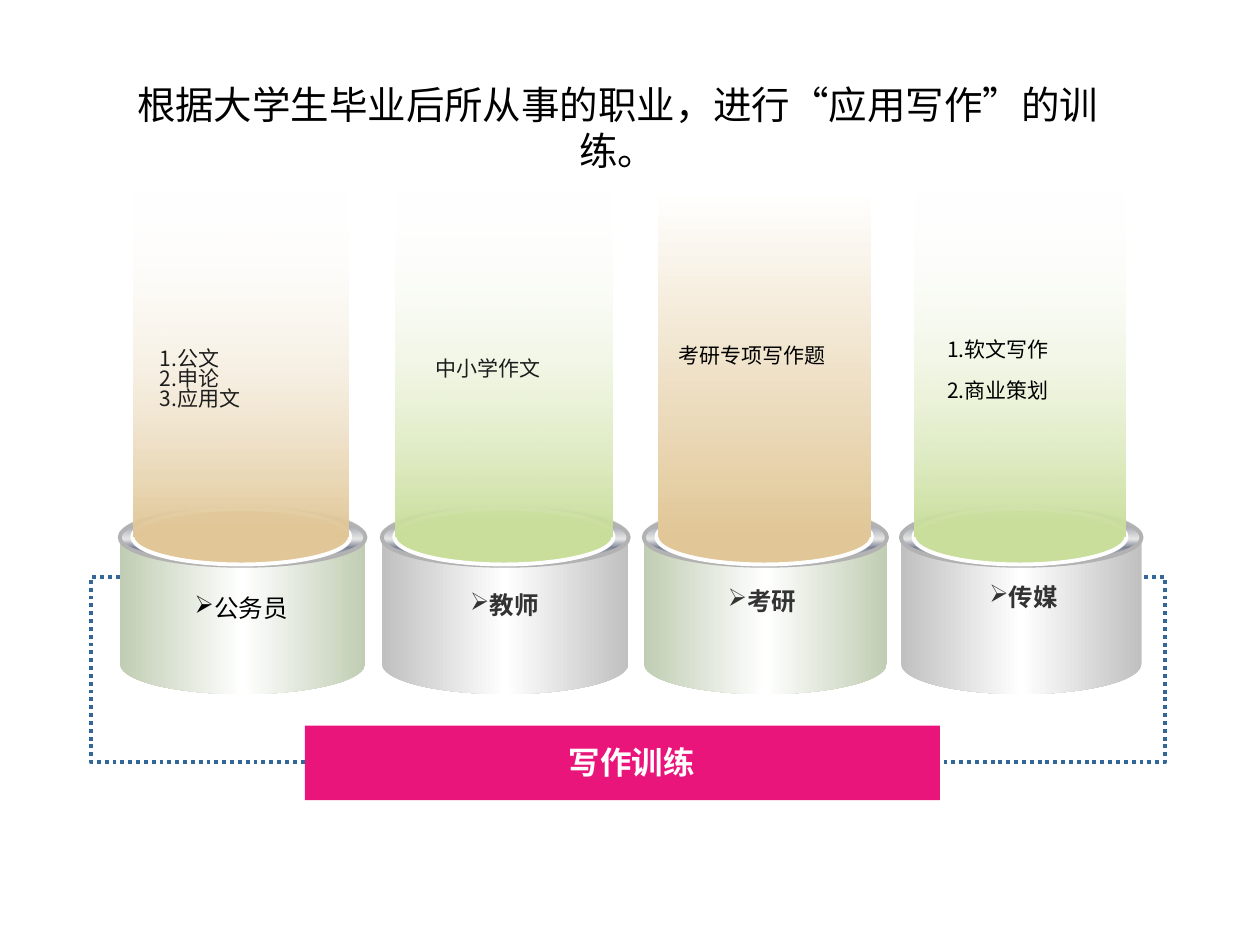
from dataclasses import dataclass

import lxml.etree
import pptx
import pptx.dml.color
import pptx.enum.dml
import pptx.enum.shapes
import pptx.enum.text
import pptx.util
from pptx.oxml.ns import qn
from pptx.util import Inches

SHAPES = pptx.enum.shapes.MSO_SHAPE
ALIGN = pptx.enum.text.PP_ALIGN
RIM_STOPS = [(0, "E6E6E6"), (15, "7D8496"), (53, "E6E6E6"),
             (68, "7D8496"), (93, "E6E6E6"), (100, "FFFFFF")]
GREEN_GREY, GREY, TAN, LIME = "C0CDB3", "C0C0C0", "E1C797", "C9DE9A"


@dataclass
class Box:
    left: float
    top: float
    width: float
    height: float

    def lengths(self) -> list:
        return [Inches(n) for n in (self.left, self.top, self.width, self.height)]


@dataclass
class Column:
    """A cylinder with a beam of colour, its topics and its profession."""
    left: float
    width: float
    can_color: str
    beam_color: str
    topics: list
    topic_box: Box
    topic_color: str
    label: str
    label_box: Box
    numbered: bool = False
    topic_gap: float = 0
    clear_top: bool = True
    label_color: str = "333333"
    label_bold: bool = True


COLUMNS = [
    Column(0.95, 1.95, GREEN_GREY, TAN, ["公文", "申论", "应用文"],
           Box(1.17, 2.73, 1.48, 0.59), "1C1C1C", "公务员", Box(0.74, 4.66, 2.35, 0.34),
           numbered=True, label_color="000000", label_bold=False),
    Column(3.03, 1.96, GREY, LIME, ["中小学作文"],
           Box(3.36, 2.81, 1.85, 0.26), "1C1C1C", "教师", Box(2.84, 4.63, 2.33, 0.34)),
    Column(5.11, 1.93, GREEN_GREY, TAN, ["考研专项写作题"],
           Box(5.29, 2.71, 1.82, 0.26), "000000", "考研", Box(4.93, 4.6, 2.24, 0.34),
           clear_top=False),
    Column(7.15, 1.91, GREY, LIME, ["软文写作", "商业策划"],
           Box(7.42, 2.66, 1.81, 0.59), "000000", "传媒", Box(7, 4.57, 2.25, 0.34),
           numbered=True, topic_gap=11.7),
]


def rgb(value: str) -> pptx.dml.color.RGBColor:
    return pptx.dml.color.RGBColor.from_string(value)


def set_gradient(shape, stops: list, angle: int, clear_top: bool = False) -> None:
    """Fill with (percent, colour) stops; the first may be fully transparent."""
    shape.fill.gradient()
    gradient = shape.element.spPr.find(qn("a:gradFill"))
    for child in list(gradient):
        gradient.remove(child)
    stop_list = lxml.etree.SubElement(gradient, qn("a:gsLst"))
    for index, (percent, color) in enumerate(stops):
        stop = lxml.etree.SubElement(stop_list, qn("a:gs"), pos=str(percent * 1000))
        color_element = lxml.etree.SubElement(stop, qn("a:srgbClr"), val=color)
        if clear_top and index == 0:
            lxml.etree.SubElement(color_element, qn("a:alpha"), val="0")
    lxml.etree.SubElement(gradient, qn("a:lin"), ang=str(angle * 60000), scaled="1")


def add_shape(slide, kind, box: Box, fill: str = "", line: str = ""):
    shape = slide.shapes.add_shape(kind, *box.lengths())
    shape.shadow.inherit = False
    if fill:
        shape.fill.solid()
        shape.fill.fore_color.rgb = rgb(fill)
    if line:
        shape.line.color.rgb = rgb(line)
        shape.line.width = pptx.util.Pt(2.25)
    else:
        shape.line.fill.background()
    return shape


def write_paragraph(paragraph, text: str, size: float, color: str,
                    bold: bool = False, **layout) -> None:
    for name, value in layout.items():
        setattr(paragraph, name, value)
    run = paragraph.add_run()
    run.text = text
    font_values = {"name": "Calibri", "size": pptx.util.Pt(size), "bold": bold}
    for name, value in font_values.items():
        setattr(run.font, name, value)
    run.font.color.rgb = rgb(color)


def add_text(slide, box: Box, texts: list, size: float, color: str,
             bold: bool = False, gap: float = 0, **layout) -> list:
    frame = slide.shapes.add_textbox(*box.lengths()).text_frame
    frame.word_wrap = True
    for index, text in enumerate(texts):
        paragraph = frame.add_paragraph() if index else frame.paragraphs[0]
        space = pptx.util.Pt(gap if index else 0)
        write_paragraph(paragraph, text, size, color, bold, space_before=space, **layout)
    return list(frame.paragraphs)


def set_bullet(paragraph, tag: str, hanging: float = 0, **attributes) -> None:
    properties = paragraph._p.get_or_add_pPr()
    properties.set("marL", str(Inches(hanging)))
    properties.set("indent", str(-Inches(hanging)))
    lxml.etree.SubElement(properties, qn(tag), **attributes)


def add_bracket(slide, start: tuple, end: tuple, bend: int) -> None:
    """Dotted elbow line; bend is the turning point in 1/100000 of its width."""
    connector = slide.shapes.add_connector(
        pptx.enum.shapes.MSO_CONNECTOR.ELBOW, *[Inches(n) for n in start + end])
    line_values = {"width": pptx.util.Pt(2.25),
                   "dash_style": pptx.enum.dml.MSO_LINE.ROUND_DOT}
    connector.line.color.rgb = rgb("336699")
    for name, value in line_values.items():
        setattr(connector.line, name, value)
    properties = connector.element.spPr
    lxml.etree.SubElement(properties, qn("a:effectLst"))
    guides = properties.find(qn("a:prstGeom")).find(qn("a:avLst"))
    lxml.etree.SubElement(guides, qn("a:gd"), name="adj1", fmla=f"val {bend}")


def add_column(slide, column: Column) -> None:
    left, width = column.left, column.width
    # Cylinder, metal rim, coloured surface and beam
    can = add_shape(slide, SHAPES.CAN, Box(left, 4.01, width, 1.5))
    can.adjustments[0] = 0.32
    set_gradient(can, [(0, column.can_color), (50, "FFFFFF"), (100, column.can_color)], 0)
    rim = add_shape(slide, SHAPES.OVAL, Box(left, 4.04, width, 0.45), line="B2B2B2")
    set_gradient(rim, RIM_STOPS, 90)
    add_shape(slide, SHAPES.OVAL, Box(left + 0.1, 4.04, width - 0.22, 0.44),
              column.beam_color, "FEFEFE")
    beam = add_shape(slide, SHAPES.RECTANGLE, Box(left + 0.11, 1.5, width - 0.24, 2.76))
    set_gradient(beam, [(0, "FFFFFF"), (100, column.beam_color)], 90, column.clear_top)

    # Topics on the beam, profession on the cylinder
    topics = add_text(slide, column.topic_box, column.topics, 12, column.topic_color,
                      gap=column.topic_gap, line_spacing=0.8)
    if column.numbered:
        for paragraph in topics:
            set_bullet(paragraph, "a:buAutoNum", 0.13, type="arabicPeriod")
    label, = add_text(slide, column.label_box, [column.label], 14, column.label_color,
                      column.label_bold, alignment=ALIGN.CENTER)
    set_bullet(label, "a:buChar", char="➢")


def main() -> None:
    presentation = pptx.Presentation()
    presentation.slide_width, presentation.slide_height = Inches(10), Inches(7.5)
    slide = presentation.slides.add_slide(presentation.slide_layouts[5])

    # Title
    title = slide.shapes.title
    title.left, title.top, title.width, title.height = Box(0.94, 0.7, 7.92, 0.62).lengths()
    frame_values = {"word_wrap": True, "auto_size": pptx.enum.text.MSO_AUTO_SIZE.NONE,
                    "vertical_anchor": pptx.enum.text.MSO_ANCHOR.MIDDLE}
    for name, value in frame_values.items():
        setattr(title.text_frame, name, value)
    write_paragraph(title.text_frame.paragraphs[0],
                    "根据大学生毕业后所从事的职业，进行“应用写作”的训练。",
                    22, "000000", alignment=ALIGN.CENTER)

    # Shared base and its dotted brackets
    add_shape(slide, SHAPES.RECTANGLE, Box(2.42, 5.76, 5.04, 0.59), "EA157A")
    add_bracket(slide, (0.95, 4.58), (2.42, 6.05), -15400)
    add_bracket(slide, (9.02, 4.58), (7.46, 6.05), -14500)
    add_text(slide, Box(3.12, 5.85, 3.79, 0.4), ["写作训练"], 18, "FEFEFE", True,
             alignment=ALIGN.CENTER)

    # Professions
    for column in COLUMNS:
        add_column(slide, column)
    presentation.save("out.pptx")


if __name__ == "__main__":
    main()
